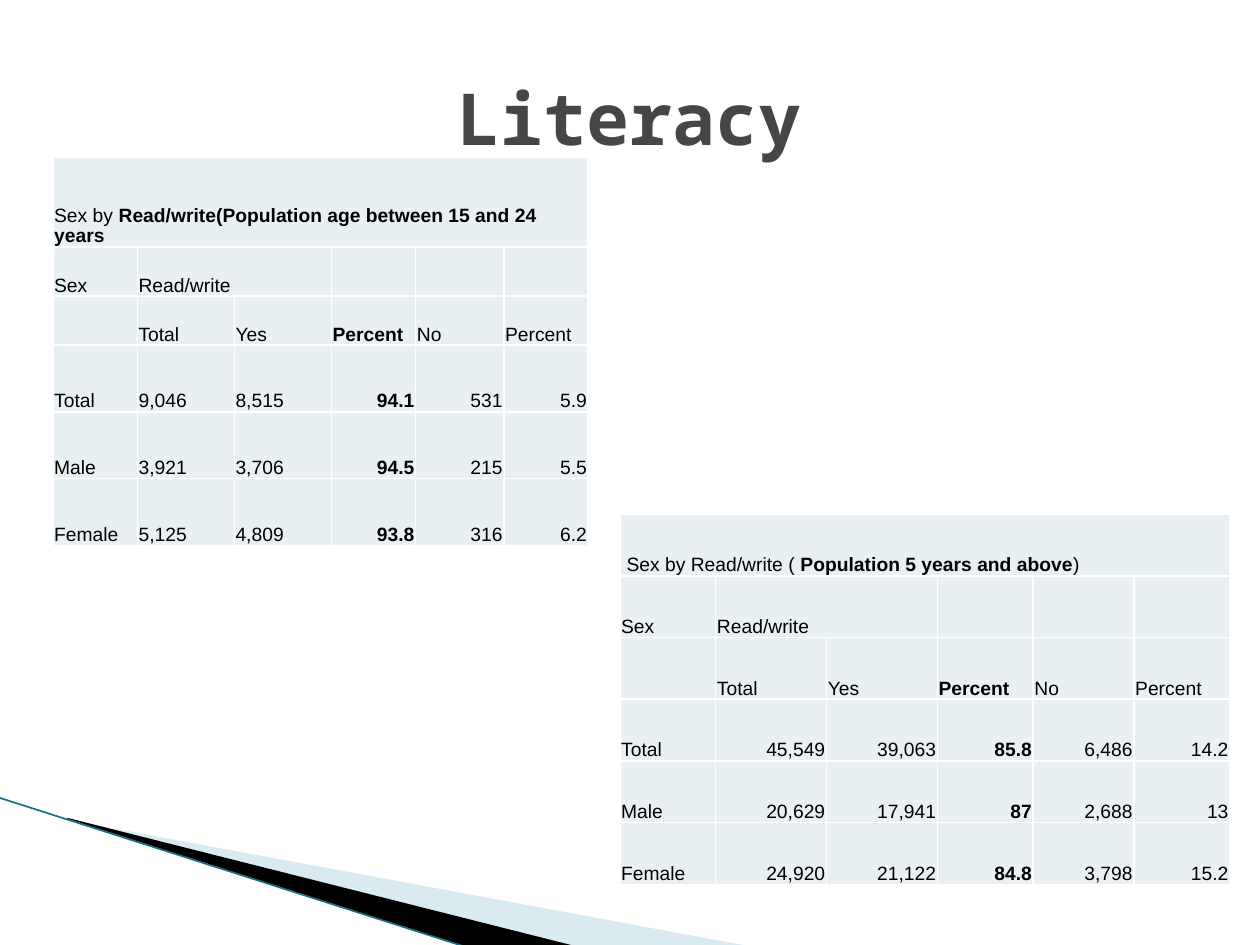
"""Build the Literacy slide with two read/write tables."""
from lxml import etree
from pptx import Presentation, util as u
from pptx.dml.color import RGBColor
from pptx.enum import shapes, text
from pptx.oxml.ns import qn


def color(value):
    return RGBColor.from_string(value)


def add_run(paragraph, words, size, font, fill, bold):
    run = paragraph.add_run()
    run.text = words
    run.font.size = u.Pt(size)
    run.font.name = font
    run.font.bold = bold
    run.font.color.rgb = color(fill)


presentation = Presentation()
presentation.slide_width = u.Inches(10)
presentation.slide_height = u.Inches(7.5)
slide = presentation.slides.add_slide(presentation.slide_layouts[6])

wedges = [
    ("A0CBDC", 40, [(0.55, 6.51), (5.95, 7.51), (4.56, 7.51), (0.55, 6.5)]),
    ("000000", 100, [(0.53, 6.49), (4.57, 7.51), (3.72, 7.52), (0.54, 6.5)]),
]
for fill, opacity, points in wedges:
    corners = [(u.Inches(x), u.Inches(y)) for x, y in points]
    builder = slide.shapes.build_freeform(*corners[0])
    builder.add_line_segments(corners[1:], close=True)
    wedge = builder.convert_to_shape()
    wedge.shadow.inherit = False
    wedge.fill.solid()
    wedge.fill.fore_color.rgb = color(fill)
    wedge.line.fill.background()
    if opacity < 100:
        tint = wedge.fill._xPr.find(qn("a:solidFill"))[0]
        etree.SubElement(tint, qn("a:alpha"), val=str(opacity * 1000))

edge = slide.shapes.add_connector(
    shapes.MSO_CONNECTOR.STRAIGHT,
    u.Inches(-0.01), u.Inches(6.33), u.Inches(3.71), u.Inches(7.52))
edge.line.color.rgb = color("1A6F85")
edge.line.width = u.Pt(0.95)
etree.SubElement(edge._element.spPr, qn("a:effectLst"))

title = slide.shapes.add_textbox(
    u.Inches(0.5), u.Inches(0.3), u.Inches(9), u.Inches(1.25))
title.text_frame.word_wrap = True
title.text_frame.vertical_anchor = text.MSO_ANCHOR.MIDDLE
heading = title.text_frame.paragraphs[0]
heading.alignment = text.PP_ALIGN.CENTER
add_run(heading, "Literacy", 41, "Noto Sans Mono", "464646", True)

header_rows = [
    ["Sex", "Read/write", "", "", "", ""],
    ["", "Total", "Yes", "Percent", "No", "Percent"],
]
tables = [
    {
        "place": (0.42, 1.25),
        "columns": [0.67, 0.77, 0.77, 0.67, 0.7, 0.67],
        "rows": [0.71, 0.39, 0.39, 0.53, 0.53, 0.53],
        "caption": [("Sex by ", False),
                    ("Read/write(Population age between 15 and 24 years", True)],
        "first_right_column": 3,
        "body": [["Total", "9,046", "8,515", "94.1", "531", "5.9"],
                 ["Male", "3,921", "3,706", "94.5", "215", "5.5"],
                 ["Female", "5,125", "4,809", "93.8", "316", "6.2"]],
    },
    {
        "place": (4.92, 4.08),
        "columns": [0.76, 0.88, 0.88, 0.76, 0.8, 0.76],
        "rows": [0.49] * 6,
        "caption": [(" Sex by Read/write ( ", False),
                    ("Population 5 years and above", True), (")", False)],
        "first_right_column": 1,
        "body": [["Total", "45,549", "39,063", "85.8", "6,486", "14.2"],
                 ["Male", "20,629", "17,941", "87", "2,688", "13"],
                 ["Female", "24,920", "21,122", "84.8", "3,798", "15.2"]],
    },
]
for data in tables:
    left, top = data["place"]
    widths, heights = data["columns"], data["rows"]
    table = slide.shapes.add_table(
        len(heights), len(widths), u.Inches(left), u.Inches(top),
        u.Inches(sum(widths)), u.Inches(sum(heights))).table
    for column, width in zip(table.columns, widths):
        column.width = u.Inches(width)
    for row, height in zip(table.rows, heights):
        row.height = u.Inches(height)
    table.cell(0, 0).merge(table.cell(0, 5))
    table.cell(1, 1).merge(table.cell(1, 2))

    grid = [[""] * 6] + header_rows + data["body"]
    for row_index, values in enumerate(grid):
        for column_index, value in enumerate(values):
            cell = table.cell(row_index, column_index)
            cell.vertical_anchor = text.MSO_ANCHOR.BOTTOM
            cell.margin_left = cell.margin_right = cell.margin_top = u.Inches(0.01)
            cell.margin_bottom = 0
            properties = cell._tc.get_or_add_tcPr()
            for side in ("a:lnL", "a:lnR", "a:lnT", "a:lnB"):
                border = etree.SubElement(properties, qn(side), w=str(u.Pt(1)))
                solid = etree.SubElement(border, qn("a:solidFill"))
                etree.SubElement(solid, qn("a:srgbClr"), val="FFFFFF")
            cell.fill.solid()
            cell.fill.fore_color.rgb = color("E8F0F4")
            paragraph = cell.text_frame.paragraphs[0]
            paragraph.line_spacing = 0.93
            paragraph.font.size = u.Pt(11)
            if row_index >= 3 and column_index >= data["first_right_column"]:
                paragraph.alignment = text.PP_ALIGN.RIGHT
            if value:
                add_run(paragraph, value, 11, "Arial", "000000", column_index == 3)

    caption = table.cell(0, 0).text_frame.paragraphs[0]
    for words, bold in data["caption"]:
        add_run(caption, words, 11, "Arial", "000000", bold)

presentation.save("out.pptx")
